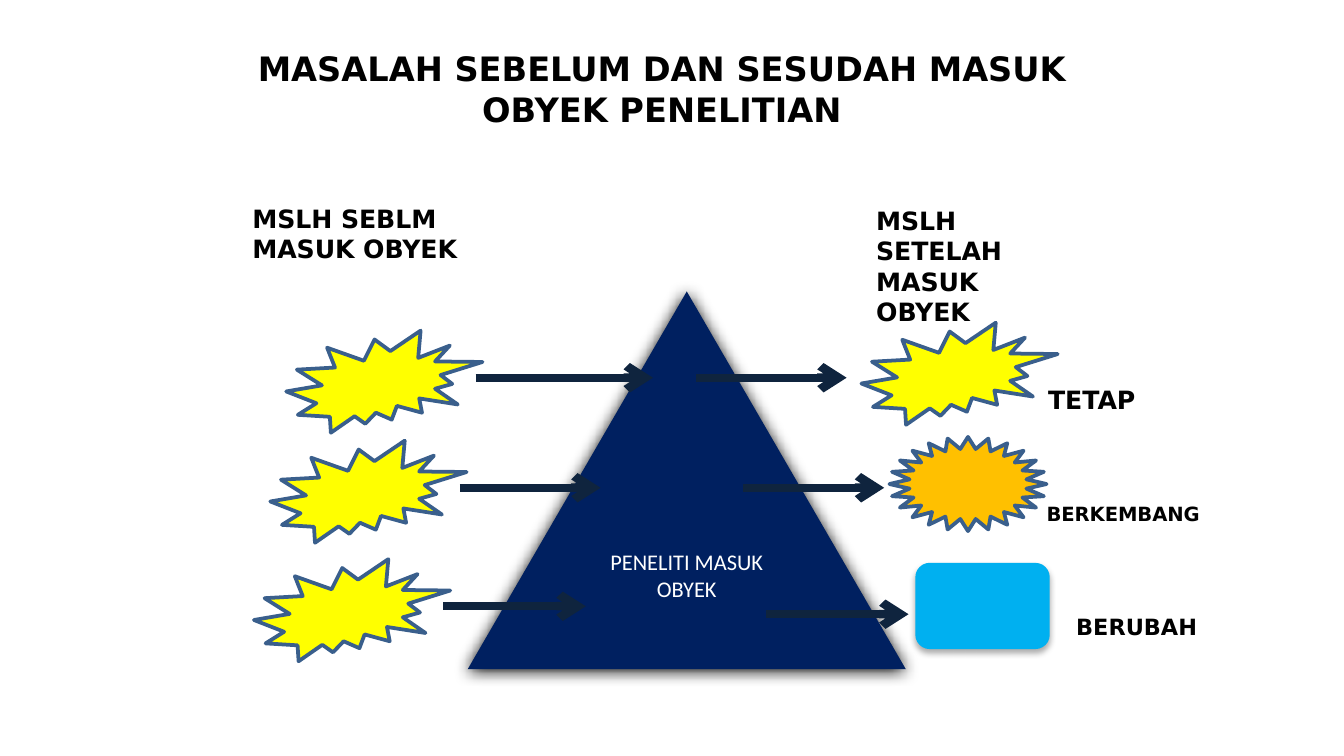
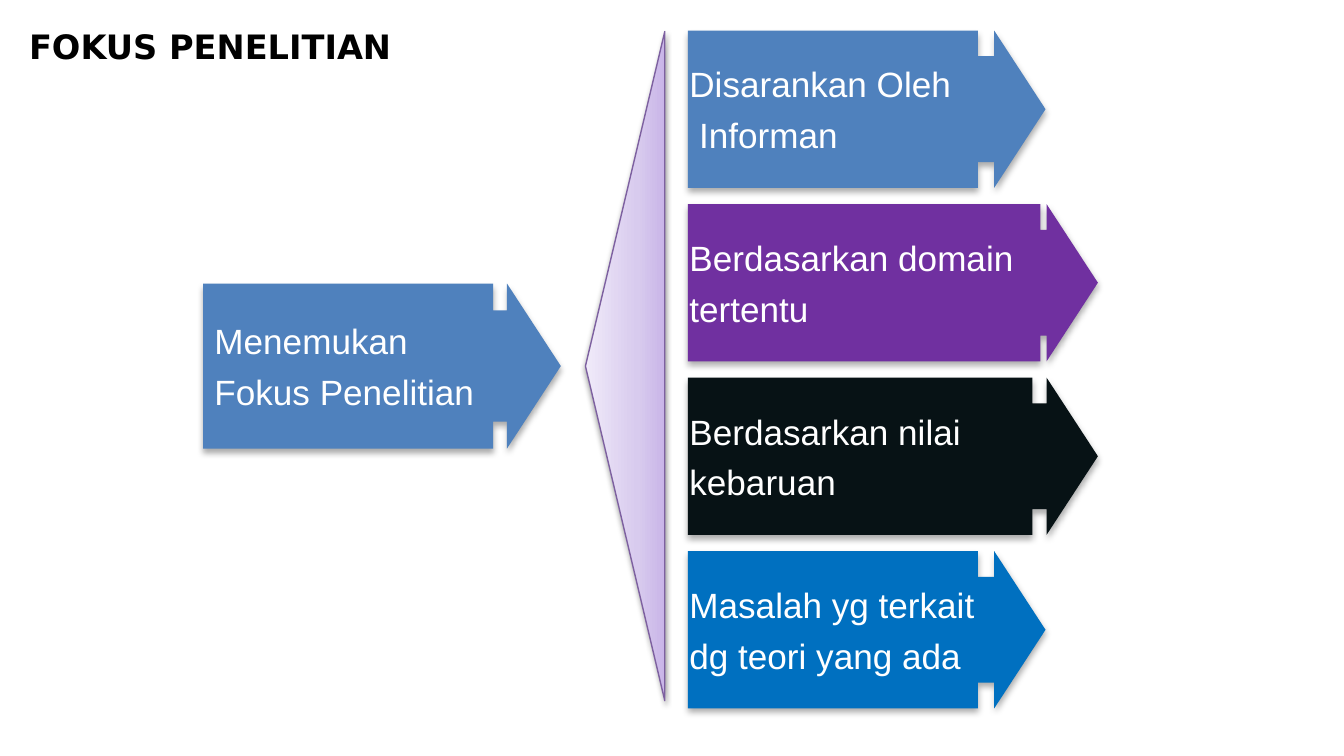
"""Build two slides on research problems and research focus."""
import copy

import pptx
import pptx.dml.color
import pptx.enum.shapes
import pptx.enum.text
import pptx.oxml
import pptx.oxml.ns
import pptx.util

Cm = pptx.util.Cm
Pt = pptx.util.Pt
Shape = pptx.enum.shapes.MSO_SHAPE
Align = pptx.enum.text.PP_ALIGN
Anchor = pptx.enum.text.MSO_ANCHOR
rgb = pptx.dml.color.RGBColor.from_string
qn = pptx.oxml.ns.qn

COLORS = {
    "black": "000000", "white": "FFFFFF", "navy": "002060", "yellow": "FFFF00",
    "outline": "3A5F8C", "arrow": "0F243E", "orange": "FFC000", "sky": "00B0F0",
    "steel": "4F81BD", "purple": "7030A0", "ink": "071215", "blue": "0070C0",
    "violet": "7D60A0", "lilac": "C9B5E8", "pale": "D8CBEE", "mist": "F0EAF9",
}
HEADING = "DejaVu Sans"
SOFT_SHADOW = (32, 3.5, 2.2)


def add_figure(page, kind, place, color, outline=None, width=2, shadow=None):
    """Add a preset shape with fill, optional outline and (opacity, blur, distance) shadow."""
    figure = page.shapes.add_shape(kind, *map(Cm, place))
    figure.fill.solid()
    figure.fill.fore_color.rgb = rgb(COLORS[color])
    if outline:
        figure.line.color.rgb = rgb(COLORS[outline])
        figure.line.width = Pt(width)
    else:
        figure.line.fill.background()
    figure.shadow.inherit = False
    if shadow:
        opacity, blur, distance = shadow
        figure._element.spPr.find(qn("a:effectLst")).append(pptx.oxml.parse_xml(
            f'<a:outerShdw xmlns:a="{pptx.oxml.ns.nsdecls("a").split(chr(34))[1]}" '
            f'blurRad="{Pt(blur)}" dist="{Pt(distance)}" dir="5400000" rotWithShape="0">'
            f'<a:srgbClr val="{COLORS["black"]}"><a:alpha val="{opacity * 1000}"/></a:srgbClr>'
            '</a:outerShdw>'))
    return figure


def write(box, lines, size, font=HEADING, color="black", bold=True, align=Align.LEFT, before=0):
    """Fill a box with one paragraph per line."""
    frame = box.text_frame
    frame.word_wrap = True
    for index, line in enumerate(lines):
        para = frame.add_paragraph() if index else frame.paragraphs[0]
        para.text = line
        para.alignment = align
        para.space_before = Pt(before)
        para.font.name = font
        para.font.size = Pt(size)
        para.font.bold = bold
        para.font.color.rgb = rgb(COLORS[color])


deck = pptx.Presentation()
deck.slide_width = Cm(25.4)
deck.slide_height = Cm(14.29)
blank = deck.slide_layouts[6]
problem_page = deck.slides.add_slide(blank)
focus_page = deck.slides.add_slide(blank)

pyramid = add_figure(problem_page, Shape.ISOSCELES_TRIANGLE, (8.84, 5.51, 8.28, 7.14),
                     "navy", shadow=(100, 8.5, 1))
pyramid.text_frame.vertical_anchor = Anchor.MIDDLE
write(pyramid, ["PENELITI MASUK OBYEK"], 12, "Calibri", "white", False, Align.CENTER)

for left, top in [(5.41, 6.25), (16.28, 6.1), (5.11, 8.33), (4.8, 10.57)]:
    add_figure(problem_page, Shape.EXPLOSION2, (left, top, 3.71, 1.93), "yellow", "outline")
add_figure(problem_page, Shape.STAR_24_POINT, (16.81, 8.26, 2.97, 1.78), "orange", "outline")
add_figure(problem_page, Shape.ROUNDED_RECTANGLE, (17.3, 10.64, 2.54, 1.63), "sky",
           shadow=SOFT_SHADOW)

arrows = [
    (8.99, 12.34, 7.14), (13.16, 16, 7.14),
    (8.69, 11.35, 9.22), (14.05, 16.71, 9.22),
    (8.38, 11.07, 11.46), (14.48, 17.17, 11.61),
]
for start, end, height in arrows:
    arrow = problem_page.shapes.add_connector(
        pptx.enum.shapes.MSO_CONNECTOR.STRAIGHT, Cm(start), Cm(height), Cm(end), Cm(height))
    arrow.line.color.rgb = rgb(COLORS["arrow"])
    arrow.line.width = Pt(4.5)
    head = arrow.line._get_or_add_ln().makeelement(qn("a:tailEnd"), {"type": "arrow"})
    arrow.line._get_or_add_ln().append(head)
    properties = arrow._element.spPr
    properties.append(properties.makeelement(qn("a:effectLst"), {}))

labels = [
    (problem_page, (3.66, 0.79, 17.7, 1.8),
     ["MASALAH SEBELUM DAN SESUDAH MASUK OBYEK PENELITIAN"], 18, Align.CENTER),
    (problem_page, (19.56, 7.14, 3.28, 0.84), ["TETAP"], 13.5, Align.LEFT),
    (problem_page, (19.53, 9.37, 4.47, 0.71), ["BERKEMBANG"], 10.5, Align.LEFT),
    (problem_page, (20.09, 11.46, 3.28, 0.76), ["BERUBAH"], 12, Align.LEFT),
    (problem_page, (4.52, 3.71, 4.62, 1.42), ["MSLH SEBLM MASUK OBYEK"], 13.5, Align.LEFT),
    (problem_page, (16.31, 3.76, 3.96, 2.57), ["MSLH SETELAH", "MASUK OBYEK"], 13.5, Align.LEFT),
    (focus_page, (0.3, 0.36, 11.2, 1.02), ["FOKUS PENELITIAN"], 18, Align.LEFT),
]
for page, place, lines, size, align in labels:
    write(page.shapes.add_textbox(*map(Cm, place)), lines, size, align=align)

callouts = [((3.84, 5.36, 6.76, 3.12), "steel", 0.811, [" Menemukan", " Fokus Penelitian"])]
reasons = [
    (6.76, "steel", 0.811, ["Disarankan Oleh", " Informan"]),
    (7.75, "purple", 0.86, ["Berdasarkan domain", "tertentu"]),
    (7.75, "ink", 0.84, ["Berdasarkan nilai", "kebaruan"]),
    (6.76, "blue", 0.811, ["Masalah yg terkait", "dg teori yang ada"]),
]
for row, (width, color, body, lines) in enumerate(reasons):
    callouts.append(((13, 0.58 + 3.28 * row, width, 2.97), color, body, lines))

for place, color, body, lines in callouts:
    callout = add_figure(focus_page, Shape.RIGHT_ARROW_CALLOUT, place, color, shadow=SOFT_SHADOW)
    for index, value in enumerate((0.674, 0.5, 0.326, body)):
        callout.adjustments[index] = value
    write(callout, lines, 18.8, "Arial", "white", False, before=4.5)
    frame = callout.text_frame
    frame.word_wrap = False
    frame.vertical_anchor = Anchor.MIDDLE
    frame.margin_left = frame.margin_right = frame.margin_top = frame.margin_bottom = Cm(0.03)

fan = add_figure(focus_page, Shape.ISOSCELES_TRIANGLE, (5.49, 6.17, 12.65, 1.5),
                 "lilac", "violet", 0.75, (38, 3.1, 1.6))
fan.rotation = 270
fan.fill.gradient()
fan.fill.gradient_angle = 90
first_stop = fan._element.spPr.find(".//" + qn("a:gs"))
first_stop.addnext(copy.deepcopy(first_stop))
for stop, position, color in zip(fan.fill.gradient_stops, (0, 0.35, 1), ("lilac", "pale", "mist")):
    stop.position = position
    stop.color.rgb = rgb(COLORS[color])

deck.save("out.pptx")
